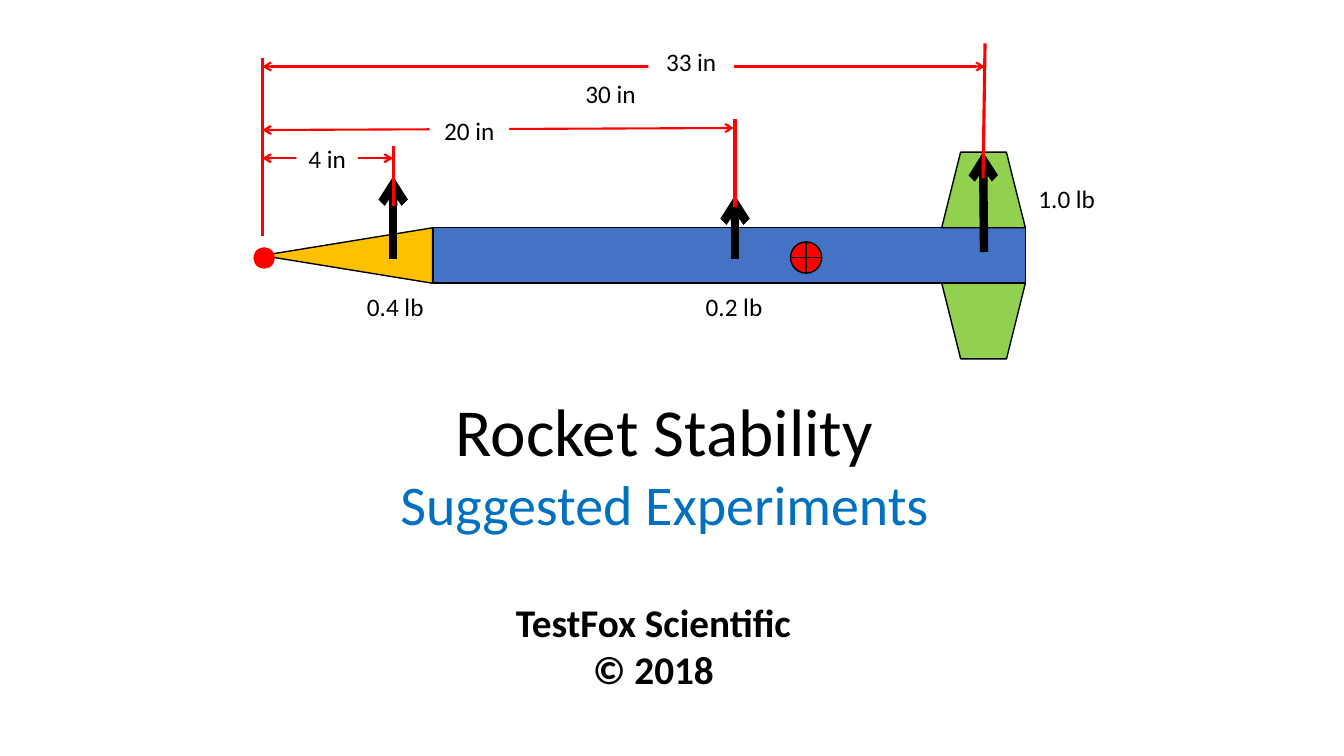
from lxml.etree import SubElement
from pptx import Presentation
from pptx.dml.color import RGBColor
from pptx.enum.shapes import MSO_CONNECTOR, MSO_SHAPE
from pptx.enum.text import MSO_ANCHOR, PP_ALIGN
from pptx.oxml.ns import qn
from pptx.util import Inches, Pt

COLORS = {
    "black": "000000", "white": "FFFFFF", "red": "FF0000", "heading": "0070C0",
    "nose": "FFC000", "body": "4472C4", "fin": "92D050",
}

deck = Presentation()
deck.slide_width, deck.slide_height = Inches(13.33), Inches(7.5)
page = deck.slides.add_slide(deck.slide_layouts[6])


def add_line(start, end, color, width, arrow_ends=()):
    """Draw a straight line; arrow_ends may hold "headEnd" (start) and "tailEnd" (end)."""
    line = page.shapes.add_connector(
        MSO_CONNECTOR.STRAIGHT, *(Inches(value) for value in (*start, *end)))
    line.line.color.rgb = RGBColor.from_string(COLORS[color])
    line.line.width = Pt(width)
    for arrow_end in arrow_ends:
        SubElement(line.line._get_or_add_ln(), qn(f"a:{arrow_end}"), type="arrow")
    SubElement(line._element.spPr, qn("a:effectLst"))


def add_text(place, paragraphs, fill=None):
    """Add centred text; each paragraph is (text, size, color, bold)."""
    box = page.shapes.add_textbox(*(Inches(value) for value in place))
    if fill:
        box.fill.solid()
        box.fill.fore_color.rgb = RGBColor.from_string(COLORS[fill])
    frame = box.text_frame
    frame.word_wrap = True
    frame.vertical_anchor = MSO_ANCHOR.TOP
    for index, (text, size, color, bold) in enumerate(paragraphs):
        para = frame.add_paragraph() if index else frame.paragraphs[0]
        para.text = text
        para.alignment = PP_ALIGN.CENTER
        para.font.name = "Calibri"
        para.font.size = Pt(size)
        para.font.bold = bold
        para.font.color.rgb = RGBColor.from_string(COLORS[color])


add_text((3.35, 3.81, 6.48, 1.58), [
    ("Rocket Stability", 48, "black", False),
    ("Suggested Experiments", 40, "heading", False),
])

# Rocket parts and the two centre markers
rocket_parts = [
    (MSO_SHAPE.ISOSCELES_TRIANGLE, (3.17, 1.69, 0.55, 1.69), 270, "nose", "black"),
    (MSO_SHAPE.RECTANGLE, (4.3, 2.26, 5.87, 0.55), 0, "body", "black"),
    (MSO_SHAPE.TRAPEZOID, (9.34, 1.51, 0.83, 0.75), 0, "fin", "black"),
    (MSO_SHAPE.TRAPEZOID, (9.34, 2.81, 0.83, 0.75), 180, "fin", "black"),
    (MSO_SHAPE.OVAL, (2.52, 2.46, 0.2, 0.2), 0, "red", "red"),
    (MSO_SHAPE.FLOWCHART_OR, (7.84, 2.4, 0.31, 0.31), 0, "red", "black"),
]
for kind, place, rotation, fill, outline in rocket_parts:
    part = page.shapes.add_shape(kind, *(Inches(value) for value in place))
    part.rotation = rotation
    part.shadow.inherit = False
    part.fill.solid()
    part.fill.fore_color.rgb = RGBColor.from_string(COLORS[fill])
    part.line.color.rgb = RGBColor.from_string(COLORS[outline])
    part.line.width = Pt(1)

# Force arrows
for start, end in [
    ((3.9, 2.57), (3.9, 1.75)),
    ((7.29, 2.57), (7.29, 1.94)),
    ((9.76, 2.5), (9.75, 1.51)),
]:
    add_line(start, end, "black", 6, ["tailEnd"])

# Extension lines
for start, end in [
    ((2.6, 0.58), (2.6, 2.34)),
    ((3.9, 1.45), (3.9, 2.04)),
    ((7.29, 1.18), (7.29, 2.05)),
    ((9.77, 0.43), (9.75, 1.77)),
]:
    add_line(start, end, "red", 2.25)

# Dimension lines, all measured from the nose tip
for start_y, end in [(0.66, (9.77, 0.66)), (1.57, (3.9, 1.57)), (1.29, (7.28, 1.27))]:
    add_line((2.6, start_y), end, "red", 1.5, ["headEnd", "tailEnd"])

# Distances mask the dimension lines; weights have no fill
for text, left, top, width, fill in [
    ("4 in", 2.94, 1.37, 0.61, "white"),
    ("20 in", 4.26, 1.09, 0.79, "white"),
    ("30 in", 5.63, 0.73, 0.85, "white"),
    ("33 in", 6.43, 0.41, 0.85, "white"),
    ("0.4 lb", 3.45, 2.84, 0.94, None),
    ("0.2 lb", 6.81, 2.84, 0.94, None),
    ("1.0 lb", 10.11, 1.77, 0.94, None),
]:
    add_text((left, top, width, 0.4), [(text, 18, "black", False)], fill)

add_text((4.67, 5.89, 3.62, 1.04), [
    ("TestFox Scientific", 28, "black", True),
    ("© 2018", 28, "black", True),
])

deck.save("out.pptx")
